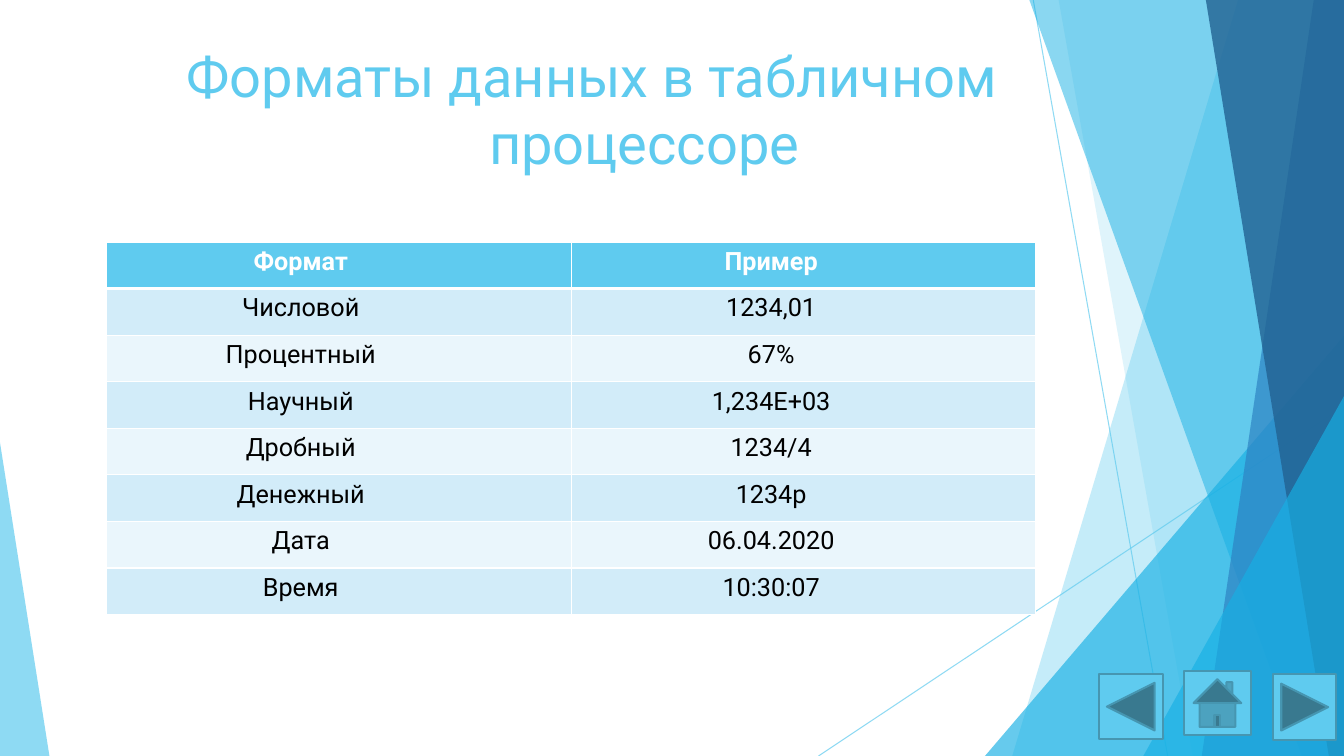
from dataclasses import dataclass

from lxml import etree
from pptx import Presentation
from pptx.dml.color import RGBColor
from pptx.enum.shapes import MSO_CONNECTOR, MSO_SHAPE
from pptx.enum.text import MSO_ANCHOR, PP_ALIGN
from pptx.oxml.ns import qn
from pptx.util import Inches, Pt

STRAIGHT = MSO_CONNECTOR.STRAIGHT
TRIANGLE = MSO_SHAPE.ISOSCELES_TRIANGLE
HOME = MSO_SHAPE.ACTION_BUTTON_HOME
BACK = MSO_SHAPE.ACTION_BUTTON_BACK_OR_PREVIOUS
FORWARD = MSO_SHAPE.ACTION_BUTTON_FORWARD_OR_NEXT
TITLE_ONLY = 5
SLIDE_WIDTH, SLIDE_HEIGHT = Inches(13.33), Inches(7.5)


@dataclass(frozen=True)
class Theme:
    font: str = "Roboto"
    title_size: int = 40
    table_size: int = 18
    sky: str = "5FCBEF"
    azure: str = "17B0E4"
    blue: str = "2E83C3"
    navy: str = "226292"
    button_edge: str = "4696B1"
    white: str = "FFFFFF"
    black: str = "000000"
    bands: tuple = ("D2ECF9", "EAF6FC")


THEME = Theme()

FORMATS = [
    ("Формат", "Пример"),
    ("Числовой", "1234,01"),
    ("Процентный", "67%"),
    ("Научный", "1,234Е+03"),
    ("Дробный", "1234/4"),
    ("Денежный", "1234р"),
    ("Дата", "06.04.2020"),
    ("Время", "10:30:07"),
]
# Right cell margins that shift the centred text left, one per column
COLUMN_MARGINS = (Inches(0.86), Inches(0.74))


# Lengths are percentages of the slide's width and height
def across(percent):
    return round(SLIDE_WIDTH * percent / 100)


def down(percent):
    return round(SLIDE_HEIGHT * percent / 100)


def box(left, top, width, height):
    return across(left), down(top), across(width), down(height)


def set_opacity(color_format_parent, percent):
    color = color_format_parent.find(".//" + qn("a:srgbClr"))
    etree.SubElement(color, qn("a:alpha"), val=str(percent * 1000))


def paint(shape, color, opacity=100):
    shape.shadow.inherit = False
    shape.fill.solid()
    shape.fill.fore_color.rgb = RGBColor.from_string(color)
    shape.line.fill.background()
    if opacity < 100:
        set_opacity(shape.fill._xPr.find(qn("a:solidFill")), opacity)


def format_runs(paragraph, size, color, bold=False):
    for run in paragraph.runs:
        run.font.name = THEME.font
        run.font.size = Pt(size)
        run.font.bold = bold
        run.font.color.rgb = RGBColor.from_string(color)


# Backdrop parts
def add_ray(slide, start_x, start_y, end_x, end_y):
    ray = slide.shapes.add_connector(
        STRAIGHT, across(start_x), down(start_y), across(end_x), down(end_y))
    ray.line.width = Pt(0.75)
    ray.line.color.rgb = RGBColor.from_string(THEME.sky)
    properties = ray._element.spPr
    set_opacity(properties, 70)
    etree.SubElement(properties, qn("a:effectLst"))


def add_facet(slide, top_x, bottom_x, color, opacity):
    """Fill from a slanted left edge to the right side of the slide."""
    builder = slide.shapes.build_freeform(across(top_x), 0)
    builder.add_line_segments([
        (SLIDE_WIDTH, 0), (SLIDE_WIDTH, SLIDE_HEIGHT),
        (across(bottom_x), SLIDE_HEIGHT)])
    paint(builder.convert_to_shape(), color, opacity)


def add_corner(slide, left, top, right, apex, color, opacity):
    """Triangle standing on the slide's bottom edge."""
    corner = slide.shapes.add_shape(
        TRIANGLE, *box(left, top, right - left, 100 - top))
    corner.adjustments[0] = apex
    paint(corner, color, opacity)


def add_backdrop(slide):
    add_ray(slide, 76.88, 0, 86.88, 100)
    add_ray(slide, 100, 53.73, 60.9, 100)
    add_facet(slide, 92.12, 75.32, THEME.sky, 36)
    add_facet(slide, 78.77, 88.75, THEME.sky, 20)
    add_corner(slide, 73.29, 44.4, 100, 1, THEME.azure, 66)
    add_facet(slide, 76.59, 96.85, THEME.azure, 50)
    add_facet(slide, 97.75, 89.42, THEME.blue, 70)
    add_facet(slide, 89.72, 98.87, THEME.navy, 80)
    add_corner(slide, 85.07, 52.4, 100, 1, THEME.azure, 66)
    add_corner(slide, 0, 58.53, 3.68, 0, THEME.sky, 70)


# Title with a hanging second line
def set_title(slide, text):
    title = slide.shapes.title
    title.left, title.top, title.width, title.height = box(13.13, 4.8, 78.92, 19.2)
    frame = title.text_frame
    frame.text = text
    frame.word_wrap = True
    frame.vertical_anchor = MSO_ANCHOR.MIDDLE
    paragraph = frame.paragraphs[0]
    paragraph.alignment = PP_ALIGN.LEFT
    hanging = Inches(3)
    properties = paragraph._p.get_or_add_pPr()
    properties.set("marL", str(hanging))
    properties.set("indent", str(-hanging))
    format_runs(paragraph, THEME.title_size, THEME.sky)


# Table of formats
def set_borders(cell, top, bottom):
    properties = cell._tc.get_or_add_tcPr()
    for side, width in (("L", 1), ("R", 1), ("T", top), ("B", bottom)):
        border = etree.SubElement(properties, qn("a:ln" + side), w=str(Pt(width)))
        fill = etree.SubElement(border, qn("a:solidFill"))
        etree.SubElement(fill, qn("a:srgbClr"), val=THEME.white)


def fill_cell(cell, text, row, margin):
    header = row == 0
    set_borders(cell, 3 if row == 1 else 1, 3 if header else 1)
    cell.fill.solid()
    cell.fill.fore_color.rgb = RGBColor.from_string(
        THEME.sky if header else THEME.bands[(row - 1) % 2])
    cell.margin_right = margin
    cell.text_frame.text = text
    paragraph = cell.text_frame.paragraphs[0]
    paragraph.alignment = PP_ALIGN.CENTER
    format_runs(paragraph, THEME.table_size,
                THEME.white if header else THEME.black, header)


def add_format_table(slide):
    table = slide.shapes.add_table(
        len(FORMATS), len(COLUMN_MARGINS), *box(7.95, 32, 69.1, 49.33)).table
    for row, texts in enumerate(FORMATS):
        for column, (text, margin) in enumerate(zip(texts, COLUMN_MARGINS)):
            fill_cell(table.cell(row, column), text, row, margin)


# Navigation buttons
def add_button(slide, kind, left, top, width, height):
    button = slide.shapes.add_shape(kind, *box(left, top, width, height))
    paint(button, THEME.sky)
    button.line.color.rgb = RGBColor.from_string(THEME.button_edge)
    button.line.width = Pt(1.5)


def main():
    presentation = Presentation()
    presentation.slide_width, presentation.slide_height = SLIDE_WIDTH, SLIDE_HEIGHT
    slide = presentation.slides.add_slide(presentation.slide_layouts[TITLE_ONLY])
    add_backdrop(slide)
    set_title(slide, "Форматы данных в табличном процессоре")
    add_format_table(slide)
    add_button(slide, HOME, 88.07, 88.8, 5.03, 8.4)
    add_button(slide, BACK, 81.77, 89.2, 4.73, 8.53)
    add_button(slide, FORWARD, 94.75, 89.2, 4.65, 8.67)
    presentation.save("out.pptx")


if __name__ == "__main__":
    main()
